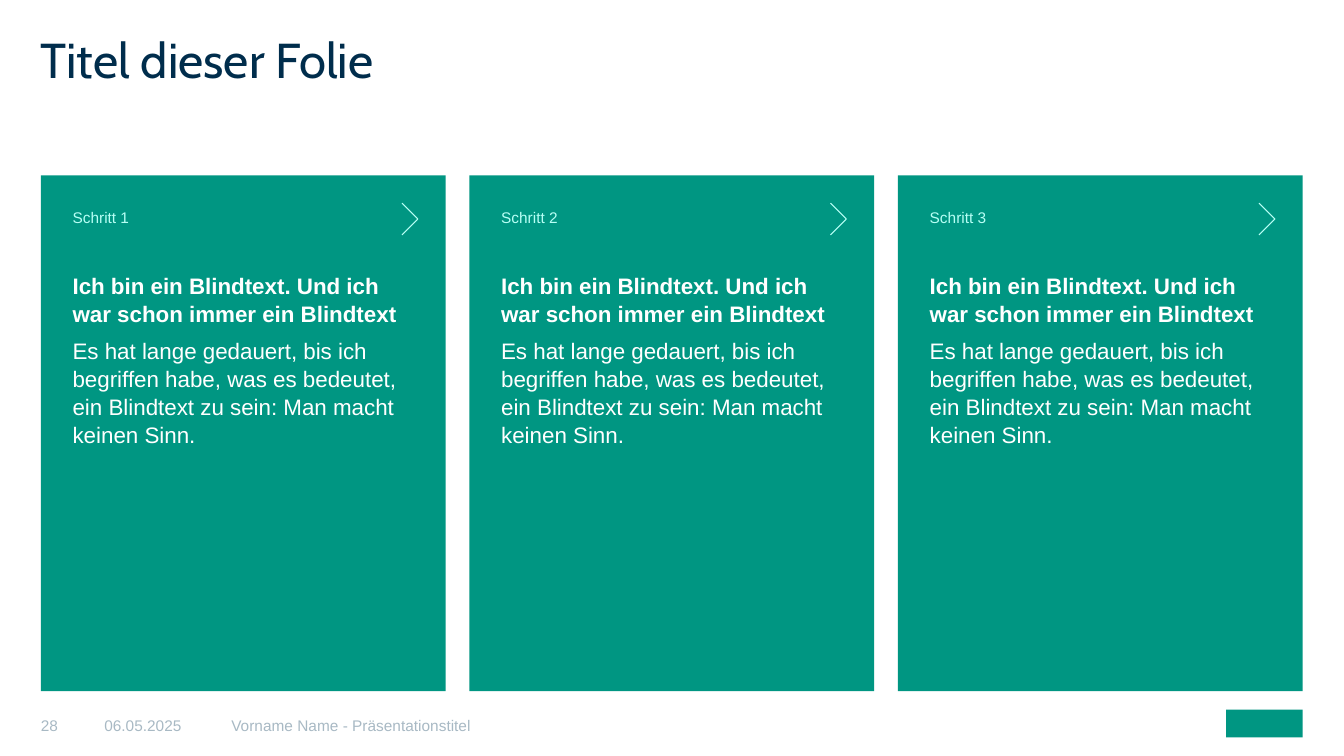
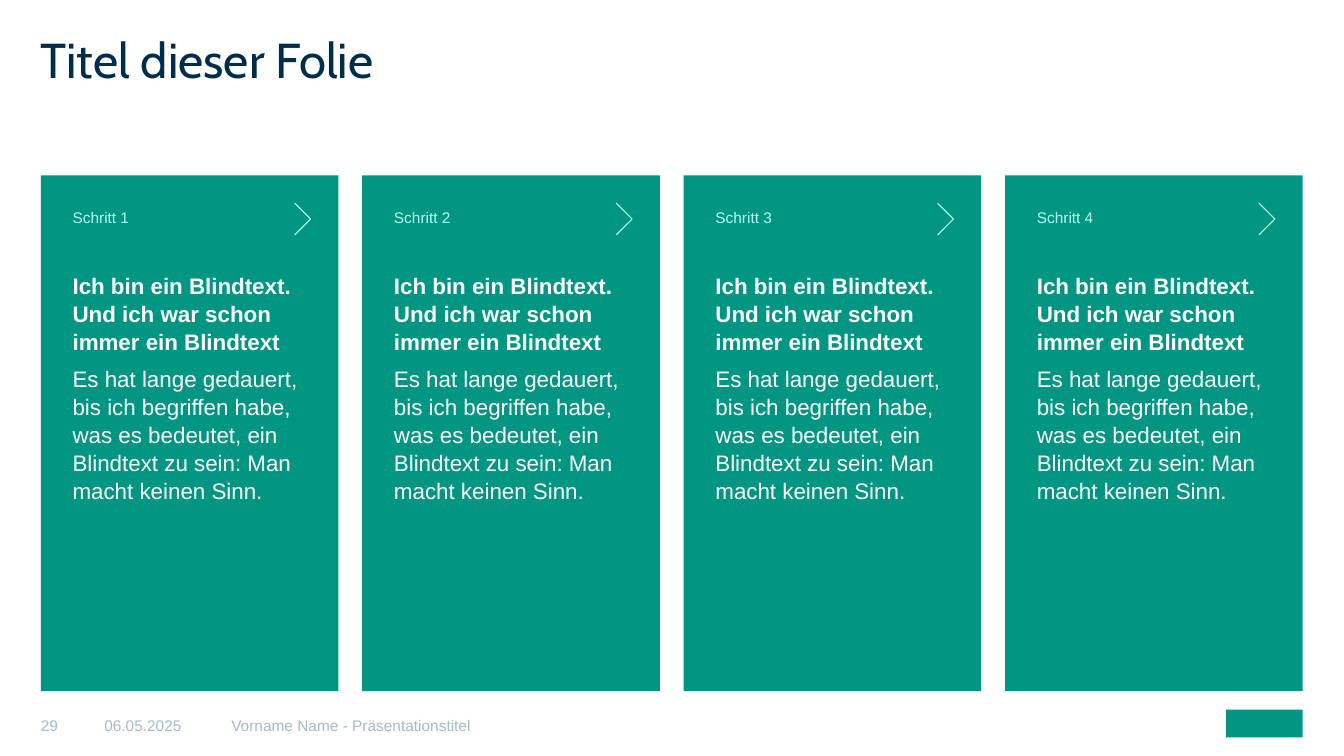
from dataclasses import dataclass

from pptx import Presentation
from pptx.dml.color import RGBColor
from pptx.enum.shapes import MSO_SHAPE
from pptx.enum.text import MSO_ANCHOR, PP_ALIGN
from pptx.util import Cm, Pt

RECTANGLE = MSO_SHAPE.RECTANGLE
TOP, MIDDLE = MSO_ANCHOR.TOP, MSO_ANCHOR.MIDDLE
LEFT = PP_ALIGN.LEFT
BLANK_LAYOUT = 6


@dataclass(frozen=True)
class Theme:
    green: RGBColor = RGBColor(0x00, 0x96, 0x82)
    navy: RGBColor = RGBColor(0x00, 0x2D, 0x4C)
    mint: RGBColor = RGBColor(0xB7, 0xFF, 0xF5)
    white: RGBColor = RGBColor(0xFF, 0xFF, 0xFF)
    grey: RGBColor = RGBColor(0xA8, 0xB9, 0xC4)
    title_font: str = "Cabin"
    body_font: str = "Arial"
    title_size: Pt = Pt(35)
    body_size: Pt = Pt(16)
    small_size: Pt = Pt(11)


@dataclass(frozen=True)
class Box:
    left: float
    top: float
    width: float
    height: float

    def lengths(self):
        return [Cm(v) for v in (self.left, self.top, self.width, self.height)]


THEME = Theme()

# Text formats: font values and paragraph values
TITLE = (
    dict(name=THEME.title_font, size=THEME.title_size, color=THEME.navy),
    dict(line_spacing=0.8),
)
FOOTER = (dict(name=THEME.body_font, size=THEME.small_size, color=THEME.grey), {})
STEP_LABEL = (
    dict(name=THEME.body_font, size=THEME.small_size, color=THEME.mint),
    dict(line_spacing=1.05, space_after=Pt(28.5)),
)
STEP_BODY = (
    dict(name=THEME.body_font, size=THEME.body_size, color=THEME.white, bold=False),
    dict(line_spacing=1.05, space_before=Pt(3), space_after=Pt(3)),
)
STEP_HEADING = (STEP_BODY[0] | dict(bold=True), STEP_BODY[1])

# Page regions in centimetres
PAGE = Box(0, 0, 33.87, 19.05)
TITLE_BOX = Box(1.03, 1.02, 31.8, 2.79)
STEPS_BOX = Box(1.03, 4.42, 31.8, 13)
FOOTER_BOX = Box(1.03, 17.42, 31.8, 1.63)
PANEL_GAP = 0.6
PANEL_INSET = 0.8
CHEVRON_INSET = 0.7

TITLE_TEXT = "Titel dieser Folie"
DATE = "06.05.2025"
AUTHOR_AND_TALK = "Vorname Name - Präsentationstitel"
HEADING = "Ich bin ein Blindtext. Und ich war schon immer ein Blindtext"
BODY = (
    "Es hat lange gedauert, bis ich begriffen habe, was es bedeutet, "
    "ein Blindtext zu sein: Man macht keinen Sinn."
)
SLIDES = [(28, 3), (29, 4)]  # page number, number of steps


def set_values(target, values):
    for name, value in values.items():
        setattr(target, name, value)


def write(frame, lines, insets=(0, 0, 0, 0), anchor=TOP):
    """Fill a text frame with (text, format) lines; insets run left, top, right, bottom."""
    sides = ("margin_left", "margin_top", "margin_right", "margin_bottom")
    set_values(frame, dict(zip(sides, map(Cm, insets))))
    set_values(frame, dict(word_wrap=True, vertical_anchor=anchor))
    for index, (text, (font_values, paragraph_values)) in enumerate(lines):
        paragraph = frame.add_paragraph() if index else frame.paragraphs[0]
        set_values(paragraph, dict(alignment=LEFT) | paragraph_values)
        run = paragraph.add_run()
        run.text = text
        set_values(run.font, {k: v for k, v in font_values.items() if k != "color"})
        run.font.color.rgb = font_values["color"]


def add_text(slide, box, line, **options):
    write(slide.shapes.add_textbox(*box.lengths()).text_frame, [line], **options)


def add_block(slide, box):
    block = slide.shapes.add_shape(RECTANGLE, *box.lengths())
    block.shadow.inherit = False
    block.fill.solid()
    block.fill.fore_color.rgb = THEME.green
    block.line.fill.background()
    return block


def add_chevron(slide, right, top, width=0.4, height=0.8):
    start = Cm(right - width)
    builder = slide.shapes.build_freeform(start, Cm(top))
    builder.add_line_segments(
        [(Cm(right), Cm(top + height / 2)), (start, Cm(top + height))], close=False
    )
    chevron = builder.convert_to_shape()
    chevron.shadow.inherit = False
    chevron.fill.background()
    chevron.line.color.rgb = THEME.mint
    chevron.line.width = Pt(0.75)


def add_step(slide, box, number):
    panel = add_block(slide, box)
    lines = [
        (f"Schritt {number}", STEP_LABEL),
        (HEADING, STEP_HEADING),
        (BODY, STEP_BODY),
    ]
    write(panel.text_frame, lines, insets=(PANEL_INSET,) * 4)
    add_chevron(slide, box.left + box.width - CHEVRON_INSET, box.top + CHEVRON_INSET)


def add_steps(slide, box, count):
    width = (box.width - (count - 1) * PANEL_GAP) / count
    for index in range(count):
        left = box.left + index * (width + PANEL_GAP)
        add_step(slide, Box(left, box.top, width, box.height), index + 1)


def add_footer(slide, box, page_number):
    left = box.left
    for text, width in ((str(page_number), 1.6), (DATE, 3.2), (AUTHOR_AND_TALK, 16.2)):
        cell = Box(left, box.top, width, box.height)
        add_text(slide, cell, (text, FOOTER), insets=(0, 0.1, 0, 0), anchor=MIDDLE)
        left += width
    # Plain mark at the right edge
    mark_width = 1.93
    mark_left = box.left + box.width - mark_width
    add_block(slide, Box(mark_left, box.top + 0.46, mark_width, 0.7))


def add_steps_slide(deck, page_number, step_count):
    slide = deck.slides.add_slide(deck.slide_layouts[BLANK_LAYOUT])
    add_text(slide, TITLE_BOX, (TITLE_TEXT, TITLE))
    add_steps(slide, STEPS_BOX, step_count)
    add_footer(slide, FOOTER_BOX, page_number)


def main():
    deck = Presentation()
    deck.slide_width, deck.slide_height = Cm(PAGE.width), Cm(PAGE.height)
    for page_number, step_count in SLIDES:
        add_steps_slide(deck, page_number, step_count)
    deck.save("out.pptx")


if __name__ == "__main__":
    main()
